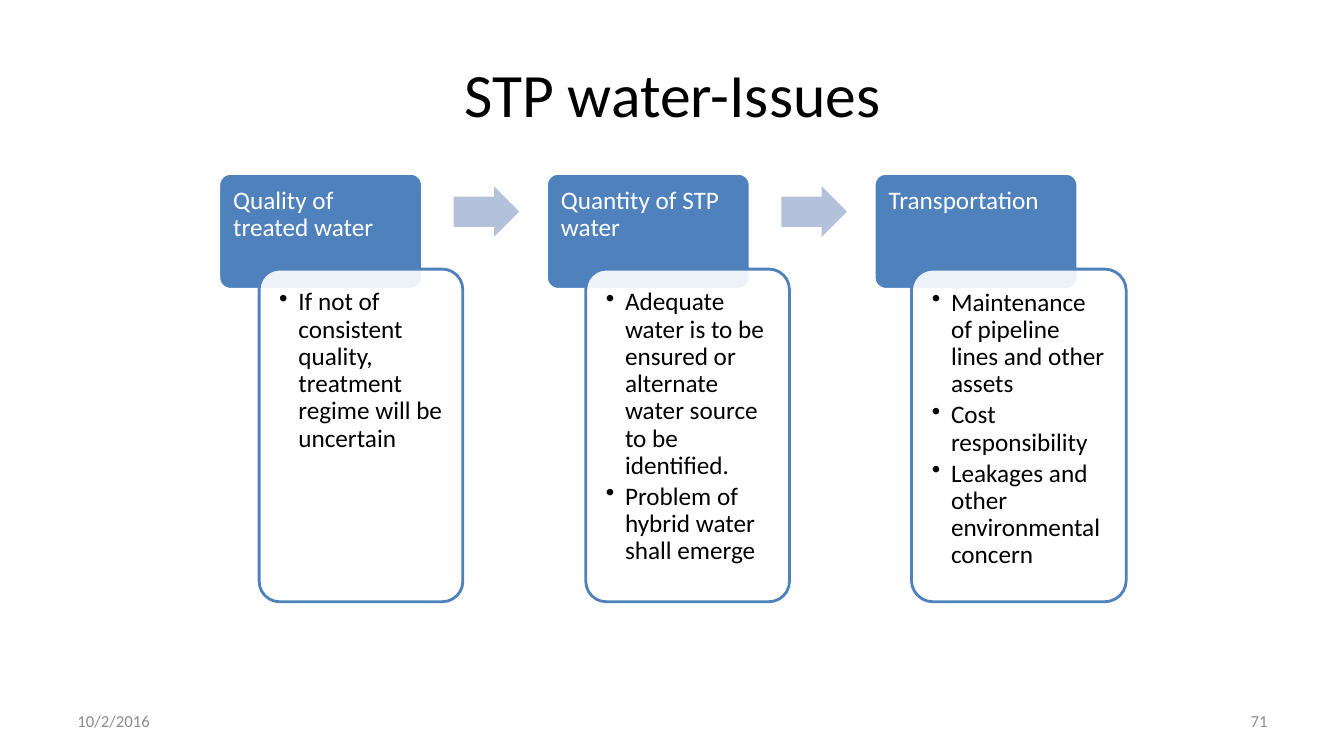
from dataclasses import dataclass

import lxml.etree
import pptx
import pptx.dml.color
import pptx.enum.shapes
import pptx.enum.text
import pptx.oxml.ns
import pptx.util

Inches = pptx.util.Inches
Pt = pptx.util.Pt
RGB = pptx.dml.color.RGBColor
SHAPE = pptx.enum.shapes.MSO_SHAPE
ALIGN = pptx.enum.text.PP_ALIGN
ANCHOR = pptx.enum.text.MSO_ANCHOR
qn = pptx.oxml.ns.qn


@dataclass(frozen=True)
class Theme:
    font: str = "Calibri"
    title_size: int = 44
    body_size: int = 18
    footer_size: int = 12
    blue: RGB = RGB(0x4F, 0x81, 0xBD)
    arrow: RGB = RGB(0xB3, 0xC1, 0xDB)
    white: RGB = RGB(0xFF, 0xFF, 0xFF)
    black: RGB = RGB(0, 0, 0)
    grey: RGB = RGB(0x8C, 0x8C, 0x8C)


@dataclass(frozen=True)
class Box:
    left: float
    top: float
    width: float
    height: float

    def emu(self) -> tuple:
        return tuple(Inches(v) for v in (self.left, self.top, self.width, self.height))


@dataclass(frozen=True)
class Issue:
    heading: str
    points: tuple
    card_left: float
    card_width: float


@dataclass(frozen=True)
class Label:
    text: str
    box: Box
    size: int
    color: RGB
    align: ALIGN


THEME = Theme()

# Step layout, in inches
FIRST_LEFT, STEP = 2.17, 3.25
HEAD_TOP, HEAD_WIDTH, HEAD_HEIGHT = 1.72, 2.02, 1.15
CARD_TOP, CARD_HEIGHT = 2.67, 3.3
ARROW_OFFSET, ARROW_TOP, ARROW_WIDTH, ARROW_HEIGHT = 2.33, 1.85, 0.65, 0.5
HEAD_INSET, CARD_INSET, BULLET_INDENT = 0.11, 0.14, 0.19

ISSUES = (
    Issue("Quality of treated water",
          ("If not of consistent quality, treatment regime will be uncertain",),
          2.57, 2.02),
    Issue("Quantity of STP water",
          ("Adequate water is to be ensured or alternate water source to be identified.",
           "Problem of hybrid water shall emerge"),
          5.81, 2.02),
    Issue("Transportation",
          ("Maintenance of pipeline lines and other assets",
           "Cost responsibility",
           "Leakages and other environmental concern"),
          9.04, 2.13),
)

LABELS = (
    Label("STP water-Issues", Box(0.67, 0.3, 12, 1.25),
          THEME.title_size, THEME.black, ALIGN.CENTER),
    Label("10/2/2016", Box(0.67, 6.95, 3.11, 0.4),
          THEME.footer_size, THEME.grey, ALIGN.LEFT),
    Label("71", Box(9.56, 6.95, 3.11, 0.4),
          THEME.footer_size, THEME.grey, ALIGN.RIGHT),
)


def style_font(p, size: int, color: RGB) -> None:
    for r in p.runs:
        r.font.name = THEME.font
        r.font.size = Pt(size)
        r.font.color.rgb = color


def add_label(slide, label: Label) -> None:
    tf = slide.shapes.add_textbox(*label.box.emu()).text_frame
    tf.word_wrap = True
    tf.vertical_anchor = ANCHOR.MIDDLE
    tf.text = label.text
    p = tf.paragraphs[0]
    p.alignment = label.align
    style_font(p, label.size, label.color)


def add_filled(slide, kind: SHAPE, box: Box, fill: RGB, line: RGB | None = None):
    sp = slide.shapes.add_shape(kind, *box.emu())
    sp.shadow.inherit = False
    sp.fill.solid()
    sp.fill.fore_color.rgb = fill
    if line is None:
        sp.line.fill.background()
    else:
        sp.line.color.rgb = line
        sp.line.width = Pt(2)
    return sp


def add_panel(slide, box: Box, fill: RGB, line: RGB, lines: tuple,
              color: RGB, inset: float, space_after: float):
    """Draw a rounded panel with top-left text."""
    sp = add_filled(slide, SHAPE.ROUNDED_RECTANGLE, box, fill, line)
    sp.adjustments[0] = 0.1
    tf = sp.text_frame
    tf.word_wrap = True
    tf.vertical_anchor = ANCHOR.TOP
    tf.margin_left = tf.margin_right = Inches(inset)
    tf.margin_top = tf.margin_bottom = Inches(inset)
    tf.text = "\n".join(lines)
    for p in tf.paragraphs:
        p.alignment = ALIGN.LEFT
        p.line_spacing = 0.9
        p.space_after = Pt(space_after)
        style_font(p, THEME.body_size, color)
    return sp


def add_bullets(sp) -> None:
    for p in sp.text_frame.paragraphs:
        pPr = p._p.get_or_add_pPr()
        pPr.set("marL", str(Inches(BULLET_INDENT)))
        pPr.set("indent", str(-Inches(BULLET_INDENT)))
        lxml.etree.SubElement(pPr, qn("a:buChar")).set("char", "•")


def set_opacity(sp, percent: int) -> None:
    clr = sp._element.spPr.find(qn("a:solidFill"))[0]
    lxml.etree.SubElement(clr, qn("a:alpha")).set("val", str(percent * 1000))


def add_issue(slide, issue: Issue, left: float) -> None:
    # Heading
    add_panel(slide, Box(left, HEAD_TOP, HEAD_WIDTH, HEAD_HEIGHT), THEME.blue,
              THEME.white, (issue.heading,), THEME.white, HEAD_INSET, 6.3)
    # Card overlapping the heading
    card = add_panel(slide, Box(issue.card_left, CARD_TOP, issue.card_width, CARD_HEIGHT),
                     THEME.white, THEME.blue, issue.points, THEME.black, CARD_INSET, 2.7)
    set_opacity(card, 90)
    add_bullets(card)


def add_step_arrow(slide, left: float) -> None:
    box = Box(left + ARROW_OFFSET, ARROW_TOP, ARROW_WIDTH, ARROW_HEIGHT)
    sp = add_filled(slide, SHAPE.RIGHT_ARROW, box, THEME.arrow)
    sp.adjustments[0] = 0.6
    sp.adjustments[1] = 0.5


def main() -> None:
    prs = pptx.Presentation()
    prs.slide_width = Inches(13.33)
    prs.slide_height = Inches(7.5)
    slide = prs.slides.add_slide(prs.slide_layouts[6])

    # Title, date and page number
    for label in LABELS:
        add_label(slide, label)

    # Issues, with arrows between them
    for i, issue in enumerate(ISSUES):
        left = FIRST_LEFT + i * STEP
        add_issue(slide, issue, left)
        if i < len(ISSUES) - 1:
            add_step_arrow(slide, left)

    prs.save("out.pptx")


if __name__ == "__main__":
    main()
